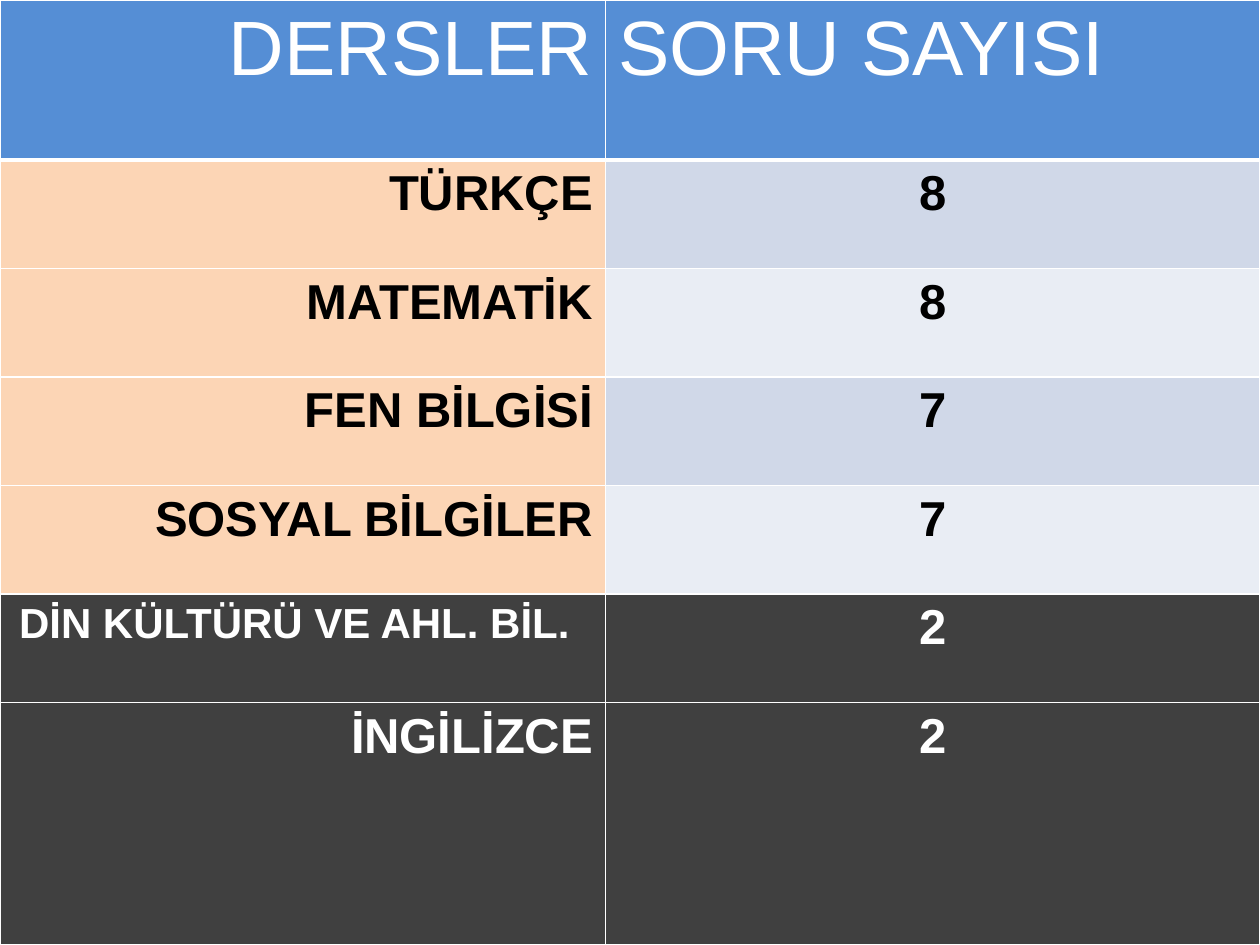
"""Builds a slide with a table of lessons and their question counts."""
from lxml import etree
from pptx import Presentation
from pptx.dml.color import RGBColor
from pptx.enum import text
from pptx.oxml import ns
from pptx.util import Pt

HEAD = ("DERSLER", "SORU SAYISI")
LESSONS = [
    ("TÜRKÇE", 8),
    ("MATEMATİK", 8),
    ("FEN BİLGİSİ", 7),
    ("SOSYAL BİLGİLER", 7),
    ("DİN KÜLTÜRÜ VE AHL. BİL.", 2),
    ("İNGİLİZCE", 2),
]
LONG = 4
MAIN = 4
WIDE, HIGH = 720, 540
LEFT, TOP, ROW = 346, 91.5, 62
BLUE, PEACH, DARK = "558ED5", "FCD5B5", "404040"
BANDS = ("D0D8E8", "E9EDF4")
WHITE, BLACK = "FFFFFF", "000000"
ALIGN = text.PP_ALIGN


def color(code):
    return RGBColor.from_string(code)


def edge(cell, tag, width):
    line = etree.Element(ns.qn("a:" + tag), w=str(Pt(width)))
    fill = etree.SubElement(line, ns.qn("a:solidFill"))
    etree.SubElement(fill, ns.qn("a:srgbClr"), val=WHITE)
    return line


def write(cell, words, fill, ink=BLACK, size=28, bold=True,
          align=ALIGN.RIGHT, top=1, base=1):
    cell.fill.solid()
    cell.fill.fore_color.rgb = color(fill)
    para = cell.text_frame.paragraphs[0]
    para.alignment = align
    run = para.add_run()
    run.text = str(words)
    font = run.font
    font.name, font.size, font.bold = "Arial", Pt(size), bold
    font.color.rgb = color(ink)
    props = cell._tc.get_or_add_tcPr()
    sides = (("lnL", 1), ("lnR", 1), ("lnT", top), ("lnB", base))
    for spot, (tag, width) in enumerate(sides):
        props.insert(spot, edge(cell, tag, width))


def main():
    deck = Presentation()
    deck.slide_width, deck.slide_height = Pt(WIDE), Pt(HIGH)
    slide = deck.slides.add_slide(deck.slide_layouts[6])
    count = len(LESSONS)
    table = slide.shapes.add_table(
        count + 1, 2, 0, 0, Pt(WIDE), Pt(HIGH)).table
    for col, width in zip(table.columns, (LEFT, WIDE - LEFT)):
        col.width = Pt(width)
    last = HIGH - TOP - ROW * (count - 1)
    for row, height in zip(table.rows, [TOP] + [ROW] * (count - 1) + [last]):
        row.height = Pt(height)

    for col, align in enumerate((ALIGN.RIGHT, ALIGN.LEFT)):
        write(table.cell(0, col), HEAD[col], BLUE, ink=WHITE, size=44,
              bold=False, align=align, base=3)
    for num, (name, total) in enumerate(LESSONS):
        main_part = num < MAIN
        ink = BLACK if main_part else WHITE
        top = 3 if num == 0 else 1
        write(table.cell(num + 1, 0), name, PEACH if main_part else DARK,
              ink=ink, size=24 if num == LONG else 28, top=top)
        write(table.cell(num + 1, 1), total,
              BANDS[num % 2] if main_part else DARK,
              ink=ink, align=ALIGN.CENTER, top=top)
    inset = table.cell(LONG + 1, 0)
    inset.margin_left, inset.margin_right = Pt(0), Pt(20.5)
    deck.save("out.pptx")


if __name__ == "__main__":
    main()
